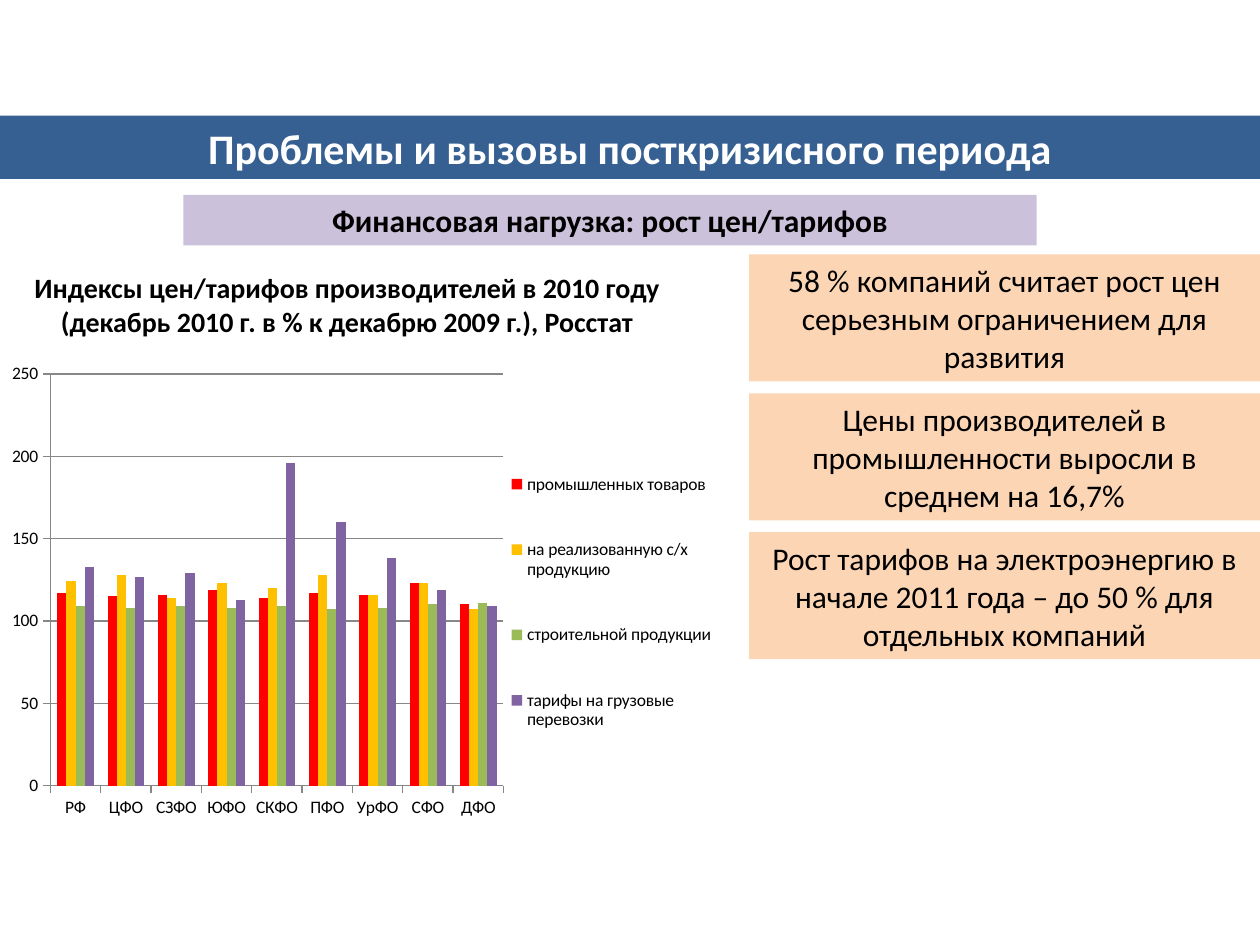
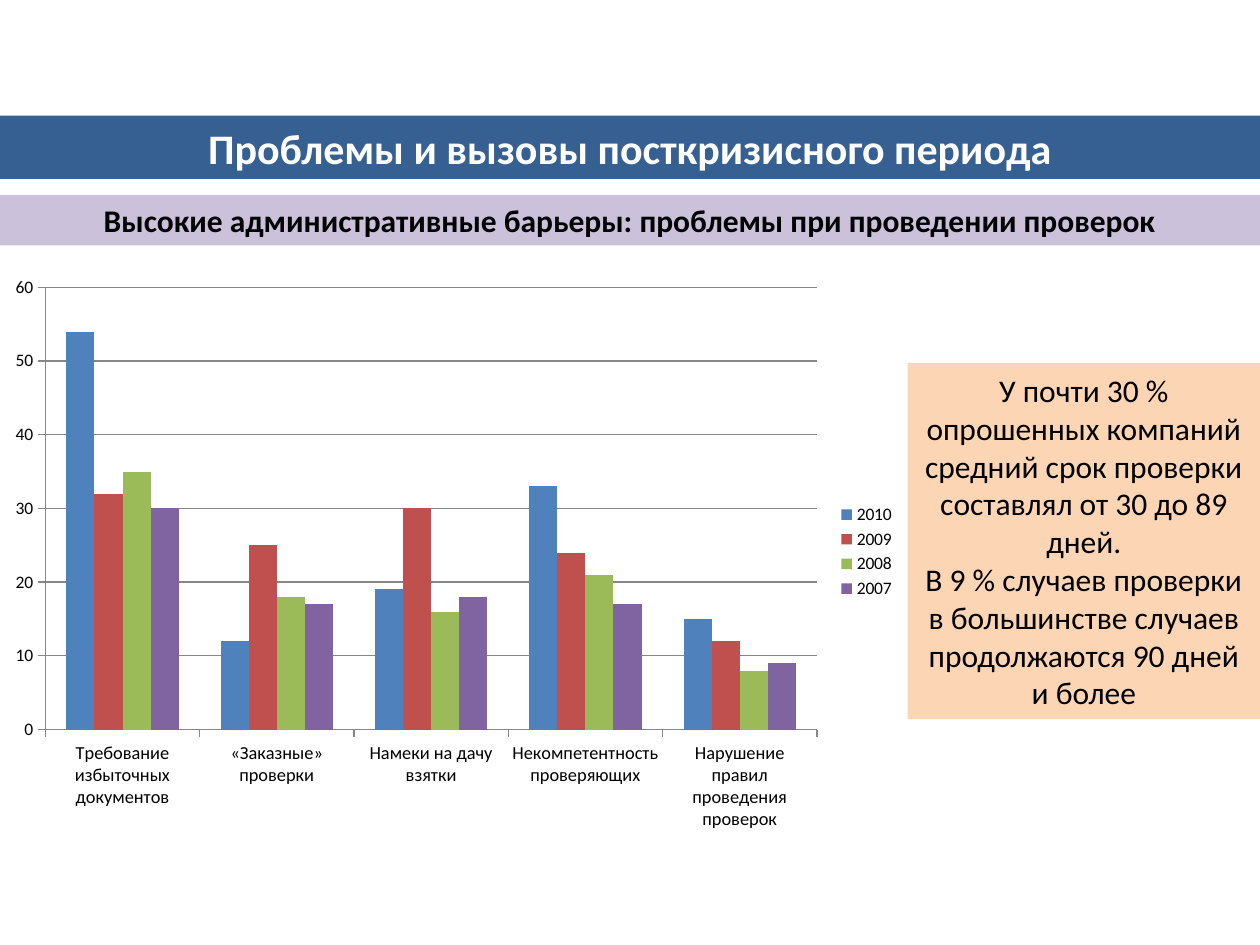
from dataclasses import dataclass

from lxml.etree import SubElement
from pptx import Presentation
from pptx.chart.data import CategoryChartData as Data
from pptx.dml.color import RGBColor as Rgb
from pptx.enum.chart import XL_CHART_TYPE as Kind, XL_LEGEND_POSITION as Side
from pptx.enum.shapes import MSO_SHAPE as Form
from pptx.enum.text import MSO_ANCHOR as Anchor, PP_ALIGN as Align
from pptx.oxml.ns import qn
from pptx.util import Cm, Pt


@dataclass(frozen=True)
class Theme:
    font: str = "Calibri"
    band: str = "376092"
    strip: str = "CCC1DA"
    note: str = "FCD5B5"
    white: str = "FFFFFF"
    black: str = "000000"
    grid: str = "878787"
    red: str = "FF0000"
    gold: str = "FFC000"
    blue: str = "4F81BD"
    brick: str = "C0504D"
    green: str = "9BBB59"
    plum: str = "8064A2"
    head: float = 24
    body: float = 18
    lead: float = 16
    tick: float = 10
    label: float = 10.5


look = Theme()
WIDE = 25.4


def box(slide, place, lines, fill=None, size=look.body, ink=look.black, bold=False):
    """Centred text on a filled rectangle, or in a plain text box without fill."""
    spot = [Cm(n) for n in place]
    if fill:
        shape = slide.shapes.add_shape(Form.RECTANGLE, *spot)
        shape.shadow.inherit = False
        shape.fill.solid()
        shape.fill.fore_color.rgb = Rgb.from_string(fill)
        shape.line.fill.background()
    else:
        shape = slide.shapes.add_textbox(*spot)
    frame = shape.text_frame
    frame.word_wrap = True
    frame.vertical_anchor = Anchor.MIDDLE if fill else Anchor.TOP
    frame.text = "\n".join(lines)
    for para in frame.paragraphs:
        para.alignment = Align.CENTER
        font = para.font
        font.name, font.size, font.bold = look.font, Pt(size), bold
        font.color.rgb = Rgb.from_string(ink)


def plot(slide, place, cats, rows, top, step, label, areas):
    """Column chart; areas gives x, y, w, h shares for the plot and the legend."""
    data = Data()
    data.categories = cats
    for name, tint, vals in rows:
        data.add_series(name, vals)
    spot = [Cm(n) for n in place]
    chart = slide.shapes.add_chart(Kind.COLUMN_CLUSTERED, *spot, data).chart
    chart.has_title = False
    chart.font.name, chart.font.size = look.font, Pt(look.tick)
    chart.font.color.rgb = Rgb.from_string(look.black)
    chart.has_legend = True
    chart.legend.position = Side.RIGHT
    chart.legend.include_in_layout = False

    bars = chart.plots[0]
    bars.gap_width, bars.overlap, bars.vary_by_categories = 150, 0, False
    for part, (name, tint, vals) in zip(bars.series, rows):
        part.format.fill.solid()
        part.format.fill.fore_color.rgb = Rgb.from_string(tint)

    axis = chart.value_axis
    axis.minimum_scale, axis.maximum_scale, axis.major_unit = 0, top, step
    axis.has_major_gridlines = True
    chart.category_axis.tick_labels.font.size = Pt(label)
    for line in (axis.format.line, axis.major_gridlines.format.line,
                 chart.category_axis.format.line):
        line.color.rgb = Rgb.from_string(look.grid)
        line.width = Pt(0.75)

    for tag, area in areas.items():
        part = next(chart.element.iter(qn(tag)))
        old = part.find(qn("c:layout"))
        if old is not None:
            part.remove(old)
        frame = SubElement(part, qn("c:layout"))
        part.insert(1 if tag == "c:legend" else 0, frame)
        rule = SubElement(frame, qn("c:manualLayout"))
        if tag == "c:plotArea":
            SubElement(rule, qn("c:layoutTarget")).set("val", "inner")
        for key in ("xMode", "yMode"):
            SubElement(rule, qn("c:" + key)).set("val", "edge")
        for key, share in zip("xywh", area):
            SubElement(rule, qn("c:" + key)).set("val", str(share))


deck = Presentation()
deck.slide_width, deck.slide_height = Cm(WIDE), Cm(19.05)

# Title band and topic strip on both slides
topics = [
    ("Финансовая нагрузка: рост цен/тарифов", 3.7, 17.2),
    ("Высокие административные барьеры: проблемы при проведении проверок", 0, WIDE),
]
for topic, left, width in topics:
    slide = deck.slides.add_slide(deck.slide_layouts[6])
    box(slide, (0, 2.33, WIDE, 1.28), ["Проблемы и вызовы посткризисного периода"],
        look.band, look.head, look.white, True)
    box(slide, (left, 3.93, width, 1.02), [topic], look.strip, bold=True)
costs, checks = deck.slides

# Slide 1: prices and tariffs
facts = [
    "58 % компаний считает рост цен серьезным ограничением для развития",
    "Цены производителей в промышленности выросли в среднем на 16,7%",
    "Рост тарифов на электроэнергию в начале 2011 года – до 50 % для отдельных компаний",
]
for i, fact in enumerate(facts):
    box(costs, (15.1, 5.13 + 2.8 * i, 10.3, 2.56), [fact], look.note)

plot(costs, (0, 7.14, 14.5, 10),
     ["РФ", "ЦФО", "СЗФО", "ЮФО", "СКФО", "ПФО", "УрФО", "СФО", "ДФО"],
     [("промышленных товаров", look.red,
       (117, 115, 116, 119, 114, 117, 116, 123, 110)),
      ("на реализованную с/х продукцию", look.gold,
       (124, 128, 114, 123, 120, 128, 116, 123, 107)),
      ("строительной продукции", look.green,
       (109, 108, 109, 108, 109, 107, 108, 110, 111)),
      ("тарифы на грузовые перевозки", look.plum,
       (133, 127, 129, 113, 196, 160, 138, 119, 109))],
     250, 50, look.tick,
     {"c:plotArea": (0.07, 0.04, 0.63, 0.83), "c:legend": (0.71, 0.15, 0.29, 0.7)})
box(costs, (0.3, 5.33, 13.4, 1.62),
    ["Индексы цен/тарифов производителей в 2010 году "
     "(декабрь 2010 г. в % к декабрю 2009 г.), Росстат"],
    size=look.lead, bold=True)

# Slide 2: inspections
box(checks, (18.3, 7.32, 7.1, 7.18),
    ["У почти 30 % опрошенных компаний средний срок проверки составлял от 30 до 89 дней.",
     "В 9 % случаев проверки в большинстве случаев продолжаются 90 дней и более"],
    look.note)
plot(checks, (0, 5.33, 18.3, 11.58),
     ["Требование избыточных документов", "«Заказные» проверки",
      "Намеки на дачу взятки", "Некомпетентность проверяющих",
      "Нарушение правил проведения проверок"],
     [("2010", look.blue, (54, 12, 19, 33, 15)),
      ("2009", look.brick, (32, 25, 30, 24, 12)),
      ("2008", look.green, (35, 18, 16, 21, 8)),
      ("2007", look.plum, (30, 17, 18, 17, 9))],
     60, 10, look.label,
     {"c:plotArea": (0.05, 0.04, 0.85, 0.77)})

deck.save("out.pptx")
